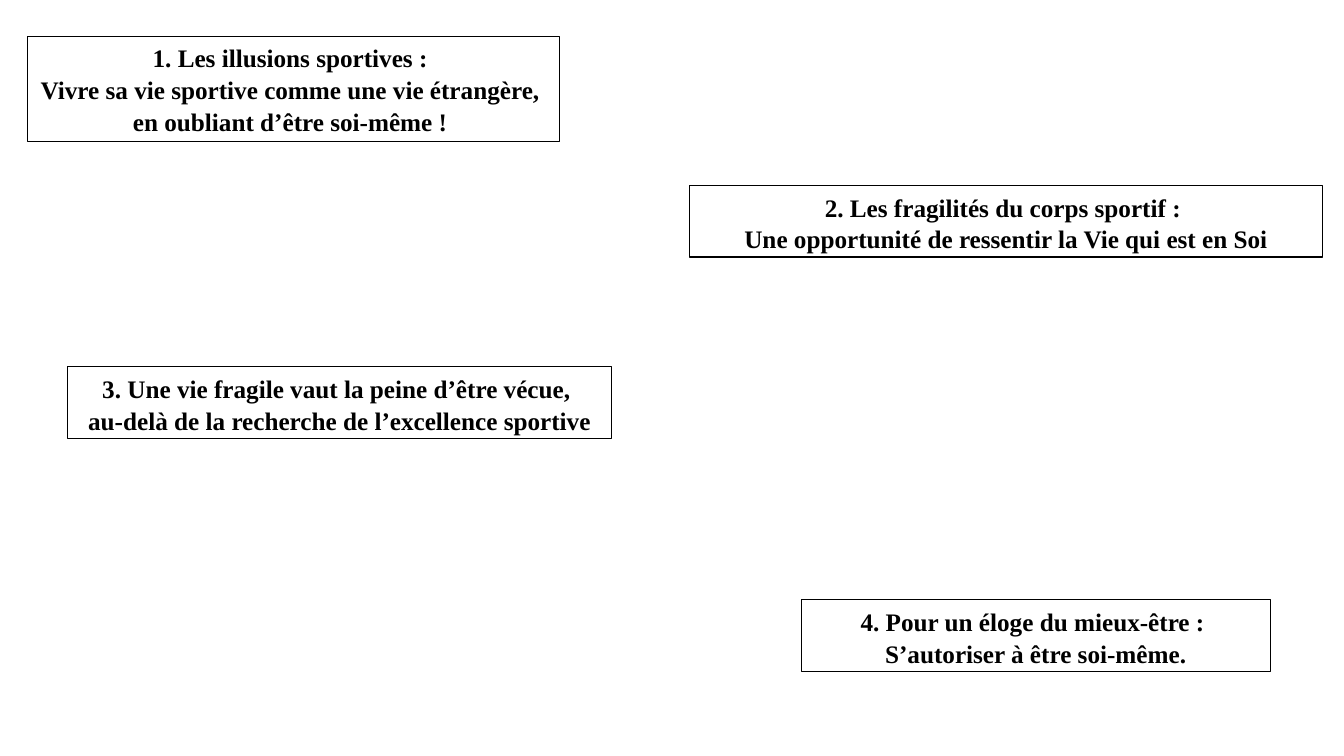
from dataclasses import dataclass

from pptx import Presentation
from pptx.dml.color import RGBColor
from pptx.enum.shapes import MSO_SHAPE as Shape
from pptx.enum.text import MSO_ANCHOR as Anchor, MSO_AUTO_SIZE as AutoSize, PP_ALIGN as Align
from pptx.slide import Slide
from pptx.util import Pt


@dataclass(frozen=True)
class Theme:
    ink: RGBColor = RGBColor(0, 0, 0)
    font: str = "Times New Roman"
    size: float = 18
    border: float = 0.75


@dataclass(frozen=True)
class Heading:
    left: float
    top: float
    width: float
    height: float
    text: str


THEME = Theme()

# The four parts of the talk, in points
HEADINGS = [
    Heading(19.4, 25.9, 380.2, 74.9,
            "1. Les illusions sportives : \n"
            "Vivre sa vie sportive comme une vie étrangère, \n"
            "en oubliant d’être soi-même ! "),
    Heading(492.5, 132.5, 452.2, 51.1,
            "2. Les fragilités du corps sportif : \n"
            "Une opportunité de ressentir la Vie qui est en Soi"),
    Heading(48.2, 262.1, 388.8, 51.1,
            "3. Une vie fragile vaut la peine d’être vécue, \n"
            "au-delà de la recherche de l’excellence sportive"),
    Heading(572.4, 428.4, 334.8, 51.1,
            "4. Pour un éloge du mieux-être : \n"
            "S’autoriser à être soi-même."),
]


def add_heading(slide: Slide, heading: Heading) -> None:
    # Outlined box
    sp = slide.shapes.add_shape(Shape.RECTANGLE, Pt(heading.left), Pt(heading.top),
                                Pt(heading.width), Pt(heading.height))
    sp.shadow.inherit = False
    sp.fill.background()
    sp.line.color.rgb = THEME.ink
    sp.line.width = Pt(THEME.border)

    # Centred bold text
    tf = sp.text_frame
    tf.word_wrap = True
    tf.auto_size = AutoSize.SHAPE_TO_FIT_TEXT
    tf.vertical_anchor = Anchor.TOP
    tf.text = heading.text
    for p in tf.paragraphs:
        p.alignment = Align.CENTER
        p.line_spacing = 1.05
        for r in p.runs:
            r.font.name = THEME.font
            r.font.size = Pt(THEME.size)
            r.font.bold = True
            r.font.color.rgb = THEME.ink


def main() -> None:
    prs = Presentation()
    prs.slide_width, prs.slide_height = Pt(960), Pt(540)
    slide = prs.slides.add_slide(prs.slide_layouts[6])
    for heading in HEADINGS:
        add_heading(slide, heading)
    prs.save("out.pptx")


if __name__ == "__main__":
    main()
